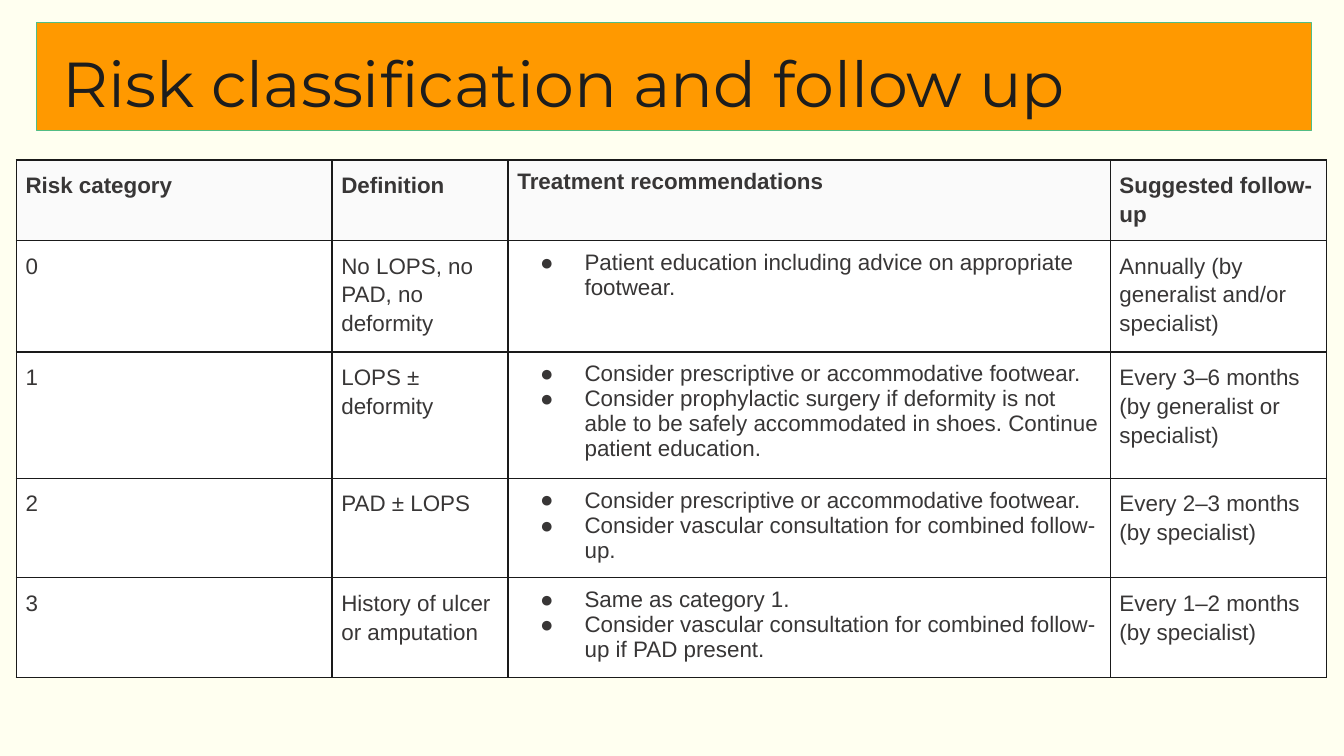
"""Build a slide with a table of foot risk categories and follow-up."""
from lxml import etree
from pptx import Presentation
from pptx.dml.color import RGBColor
from pptx.enum.shapes import MSO_SHAPE
from pptx.oxml.ns import qn
from pptx.util import Inches, Pt

RECT = MSO_SHAPE.RECTANGLE
HUES = {"page": "FFFFF0", "band": "FF9900", "edge": "51BD85", "title": "1D1D1D",
        "text": "383636", "head": "FAFAFA", "body": "FFFFFF", "rule": "1A1A1A"}
COLS = [2.35, 1.31, 4.48, 1.61]
ROWS = [0.53, 0.82, 0.89, 0.72, 0.7]
ADVICE = 2
WEAR = "Consider prescriptive or accommodative footwear."
CELLS = [
    ["Risk category", "Definition", ["Treatment recommendations"], "Suggested follow-up"],
    ["0", "No LOPS, no PAD, no deformity",
     ["Patient education including advice on appropriate footwear."],
     "Annually (by generalist and/or specialist)"],
    ["1", "LOPS ± deformity",
     [WEAR, "Consider prophylactic surgery if deformity is not able to be safely "
      "accommodated in shoes. Continue patient education."],
     "Every 3–6 months (by generalist or specialist)"],
    ["2", "PAD ± LOPS",
     [WEAR, "Consider vascular consultation for combined follow-up."],
     "Every 2–3 months (by specialist)"],
    ["3", "History of ulcer or amputation",
     ["Same as category 1.",
      "Consider vascular consultation for combined follow-up if PAD present."],
     "Every 1–2 months (by specialist)"],
]


def paint(fill, hue):
    fill.solid()
    fill.fore_color.rgb = RGBColor.from_string(HUES[hue])


def write(para, text, face, size, hue, bold=False):
    para.font.size = Pt(size)
    run = para.add_run()
    run.text = text
    font = run.font
    font.name, font.size, font.bold = face, Pt(size), bold
    font.color.rgb = RGBColor.from_string(HUES[hue])
    etree.SubElement(para._p, qn("a:endParaRPr"), sz=str(size * 100))


deck = Presentation()
deck.slide_width, deck.slide_height = Inches(10), Inches(10 * 9 / 16)
slide = deck.slides.add_slide(deck.slide_layouts[6])
paint(slide.background.fill, "page")

band = slide.shapes.add_shape(RECT, Inches(0.27), Inches(0.17), Inches(9.49), Inches(0.8))
band.shadow.inherit = False
paint(band.fill, "band")
paint(band.line.fill, "edge")
band.line.width = Pt(0.75)

title = slide.shapes.add_textbox(Inches(0.37), Inches(0.23), Inches(9.31), Inches(0.65))
frame = title.text_frame
frame.word_wrap = True
frame.margin_left = frame.margin_right = Inches(0.1)
frame.margin_top = frame.margin_bottom = Inches(0.1)
write(frame.paragraphs[0], "Risk classification and follow up", "Montserrat", 34, "title")

table = slide.shapes.add_table(len(ROWS), len(COLS), Inches(0.12), Inches(1.19),
                               Inches(sum(COLS)), Inches(sum(ROWS))).table
table.horz_banding = False
for col, width in zip(table.columns, COLS):
    col.width = Inches(width)
for row, height in zip(table.rows, ROWS):
    row.height = Inches(height)

for r, line in enumerate(CELLS):
    for c, texts in enumerate(line):
        cell = table.cell(r, c)
        cell.margin_left = cell.margin_right = Inches(0.07)
        cell.margin_top = cell.margin_bottom = Inches(0.07)
        props = cell._tc.get_or_add_tcPr()
        for side in ("a:lnL", "a:lnR", "a:lnT", "a:lnB"):
            edge = etree.SubElement(props, qn(side), w=str(Pt(0.75)))
            solid = etree.SubElement(edge, qn("a:solidFill"))
            etree.SubElement(solid, qn("a:srgbClr"), val=HUES["rule"])
        paint(cell.fill, "body" if r else "head")
        frame = cell.text_frame
        for i, text in enumerate(texts if c == ADVICE else [texts]):
            para = frame.add_paragraph() if i else frame.paragraphs[0]
            if c != ADVICE:
                para.line_spacing = 1.15
            if c != ADVICE or r == 0:
                para.space_after = Pt(10)
            else:
                form = para._p.get_or_add_pPr()
                form.set("marL", str(Inches(0.5)))
                form.set("indent", str(Inches(-0.33)))
                tint = etree.SubElement(form, qn("a:buClr"))
                etree.SubElement(tint, qn("a:srgbClr"), val=HUES["text"])
                etree.SubElement(form, qn("a:buSzPts"), val="1200")
                etree.SubElement(form, qn("a:buFont"), typeface="Arial")
                etree.SubElement(form, qn("a:buChar"), char="●")
            write(para, text, "Arial", 12, "text", r == 0)

deck.save("out.pptx")
